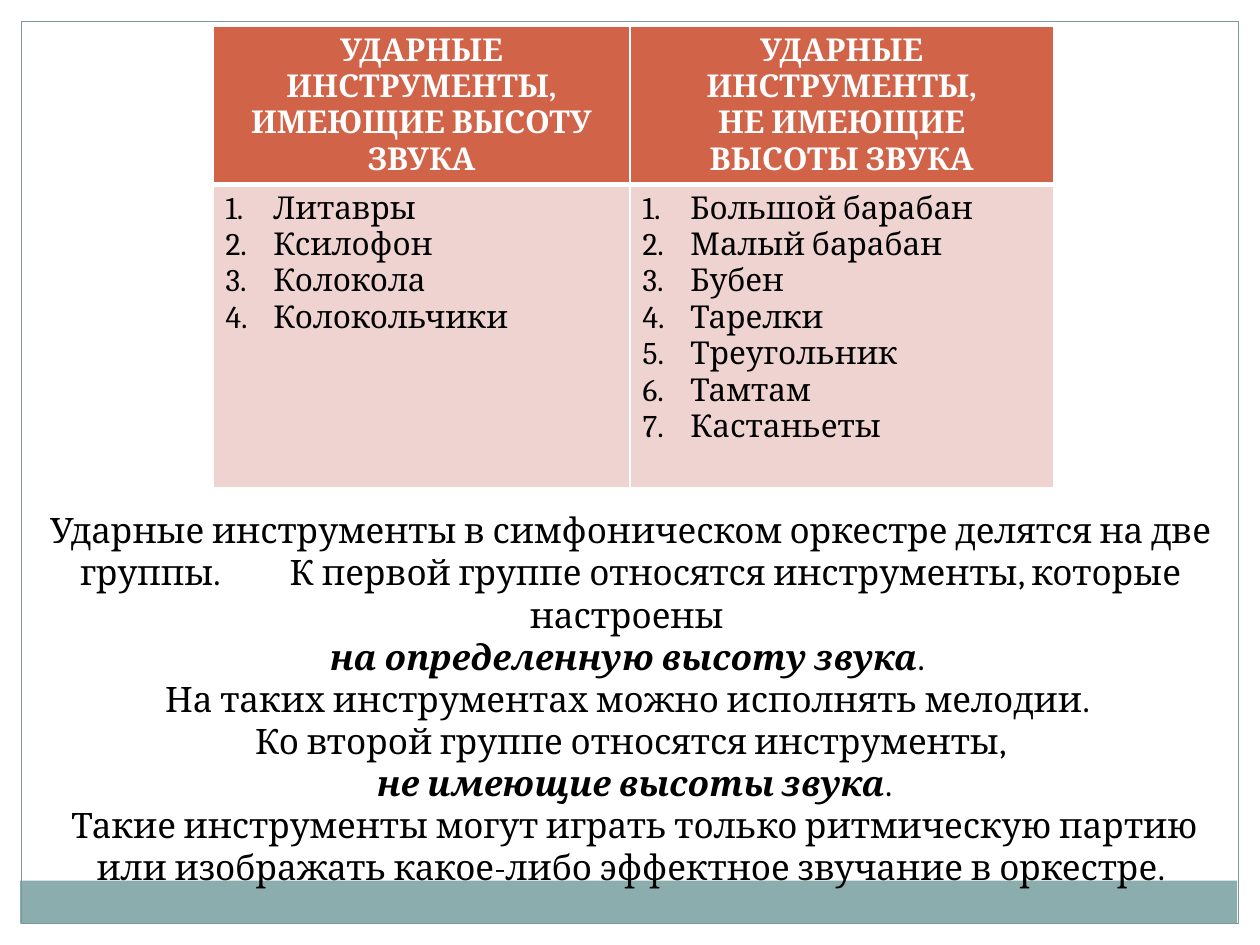
from lxml.etree import SubElement
from pptx import Presentation
from pptx.dml.color import RGBColor
from pptx.enum.shapes import MSO_SHAPE
from pptx.enum.text import MSO_AUTO_SIZE, PP_ALIGN
from pptx.oxml import parse_xml
from pptx.oxml.ns import nsdecls, qn
from pptx.util import Inches, Pt

FONT = "Cambria"
WHITE, BLACK, SAGE, FRAME = "FFFFFF", "000000", "8CADAE", "7C999A"
HEADER_FILL, BODY_FILL = "D16349", "EED3D0"

MARGINS = [(0, 0, 10, 0.17), (9.83, 0, 0.17, 7.5), (0, 0, 0.17, 7.5)]

GROUPS = [
    (["УДАРНЫЕ ИНСТРУМЕНТЫ,", "ИМЕЮЩИЕ ВЫСОТУ ЗВУКА"],
     ["Литавры", "Ксилофон", "Колокола", "Колокольчики"]),
    (["УДАРНЫЕ ИНСТРУМЕНТЫ,", "НЕ ИМЕЮЩИЕ ВЫСОТЫ ЗВУКА"],
     ["Большой барабан", "Малый барабан", "Бубен", "Тарелки",
      "Треугольник", "Тамтам", "Кастаньеты"]),
]
COLUMN_WIDTHS = [3.31, 3.36]
ROW_HEIGHTS = [1.25, 2.41]

PLAIN, STRONG, GAP = "plain", "strong", "gap"
EXPLANATION = [
    [("Ударные инструменты в симфоническом оркестре делятся на две группы.", PLAIN),
     (" ", GAP),
     ("К первой группе относятся инструменты, которые настроены ", PLAIN)],
    [("на определенную высоту звука", STRONG), (". ", PLAIN)],
    [("На таких инструментах можно исполнять мелодии. ", PLAIN)],
    [("Ко второй группе относятся инструменты,", PLAIN)],
    [(" ", PLAIN), ("не имеющие высоты звука", STRONG), (".", PLAIN)],
    [(" Такие инструменты могут играть только ритмическую партию "
      "или изображать какое-либо эффектное звучание в оркестре.", PLAIN)],
]


def color(hex_code):
    """Turn a hex string into a colour."""
    return RGBColor.from_string(hex_code)


def add_panel(slide, box, fill=None, outline=None):
    """Add a rectangle with an optional fill and outline."""
    panel = slide.shapes.add_shape(MSO_SHAPE.RECTANGLE, *map(Inches, box))
    panel.shadow.inherit = False
    if fill:
        panel.fill.solid()
        panel.fill.fore_color.rgb = color(fill)
    else:
        panel.fill.background()
    if outline:
        panel.line.color.rgb = color(outline)
        panel.line.width = Pt(0.75)
    else:
        panel.line.fill.background()


def style_font(paragraph, size, hex_code, bold=False):
    """Set the font of a whole paragraph."""
    font = paragraph.font
    font.name, font.size, font.bold = FONT, Pt(size), bold
    font.color.rgb = color(hex_code)


def number_paragraph(paragraph):
    """Give a paragraph automatic numbering with a hanging indent."""
    properties = paragraph._p.get_or_add_pPr()
    properties.set("marL", str(Inches(0.38)))
    properties.set("indent", str(-Inches(0.38)))
    numbering = parse_xml(f'<a:buAutoNum {nsdecls("a")} type="arabicPeriod"/>')
    properties.insert(0, numbering)


def set_borders(cell, widths):
    """Draw white cell borders, ordered left, right, top, bottom."""
    properties = cell._tc.get_or_add_tcPr()
    for position, (side, width) in enumerate(zip("LRTB", widths)):
        border = parse_xml(f'<a:ln{side} {nsdecls("a")} w="{Pt(width)}"/>')
        fill = SubElement(border, qn("a:solidFill"))
        SubElement(fill, qn("a:srgbClr"), val=WHITE)
        properties.insert(position, border)


def fill_cell(cell, lines, is_header):
    """Write centred heading lines or a numbered list into a cell."""
    cell.fill.solid()
    cell.fill.fore_color.rgb = color(HEADER_FILL if is_header else BODY_FILL)
    set_borders(cell, (1, 1, 1, 3) if is_header else (1, 1, 3, 1))
    cell.text_frame.text = "\n".join(lines)
    for paragraph in cell.text_frame.paragraphs:
        style_font(paragraph, 18, WHITE if is_header else BLACK, is_header)
        if is_header:
            paragraph.alignment = PP_ALIGN.CENTER
        else:
            number_paragraph(paragraph)


def add_instrument_table(slide):
    """Add the table of the two instrument groups."""
    table = slide.shapes.add_table(
        2, len(GROUPS), Inches(1.69), Inches(0.21),
        Inches(sum(COLUMN_WIDTHS)), Inches(sum(ROW_HEIGHTS))).table
    for row, height in zip(table.rows, ROW_HEIGHTS):
        row.height = Inches(height)
    for index, (heading, instruments) in enumerate(GROUPS):
        table.columns[index].width = Inches(COLUMN_WIDTHS[index])
        fill_cell(table.cell(0, index), heading, True)
        fill_cell(table.cell(1, index), instruments, False)


def add_explanation(slide):
    """Add the centred explanation below the table."""
    box = slide.shapes.add_textbox(*map(Inches, (0.2, 3.99, 9.61, 2.79)))
    frame = box.text_frame
    frame.word_wrap = True
    frame.auto_size = MSO_AUTO_SIZE.SHAPE_TO_FIT_TEXT
    for index, pieces in enumerate(EXPLANATION):
        paragraph = frame.add_paragraph() if index else frame.paragraphs[0]
        paragraph.alignment = PP_ALIGN.CENTER
        style_font(paragraph, 20, BLACK)
        for words, emphasis in pieces:
            run = paragraph.add_run()
            run.text = words
            if emphasis == STRONG:
                run.font.bold = run.font.italic = True
            elif emphasis == GAP:
                run._r.get_or_add_rPr().set("spc", "3500")


def main():
    """Build and save the slide."""
    presentation = Presentation()
    presentation.slide_width = Inches(10)
    presentation.slide_height = Inches(7.5)
    slide = presentation.slides.add_slide(presentation.slide_layouts[6])
    for margin in MARGINS:
        add_panel(slide, margin, fill=WHITE)
    add_panel(slide, (0.16, 6.99, 9.66, 0.34), fill=SAGE)
    add_panel(slide, (0.17, 0.17, 9.66, 7.16), outline=FRAME)
    add_instrument_table(slide)
    add_explanation(slide)
    presentation.save("out.pptx")


if __name__ == "__main__":
    main()
